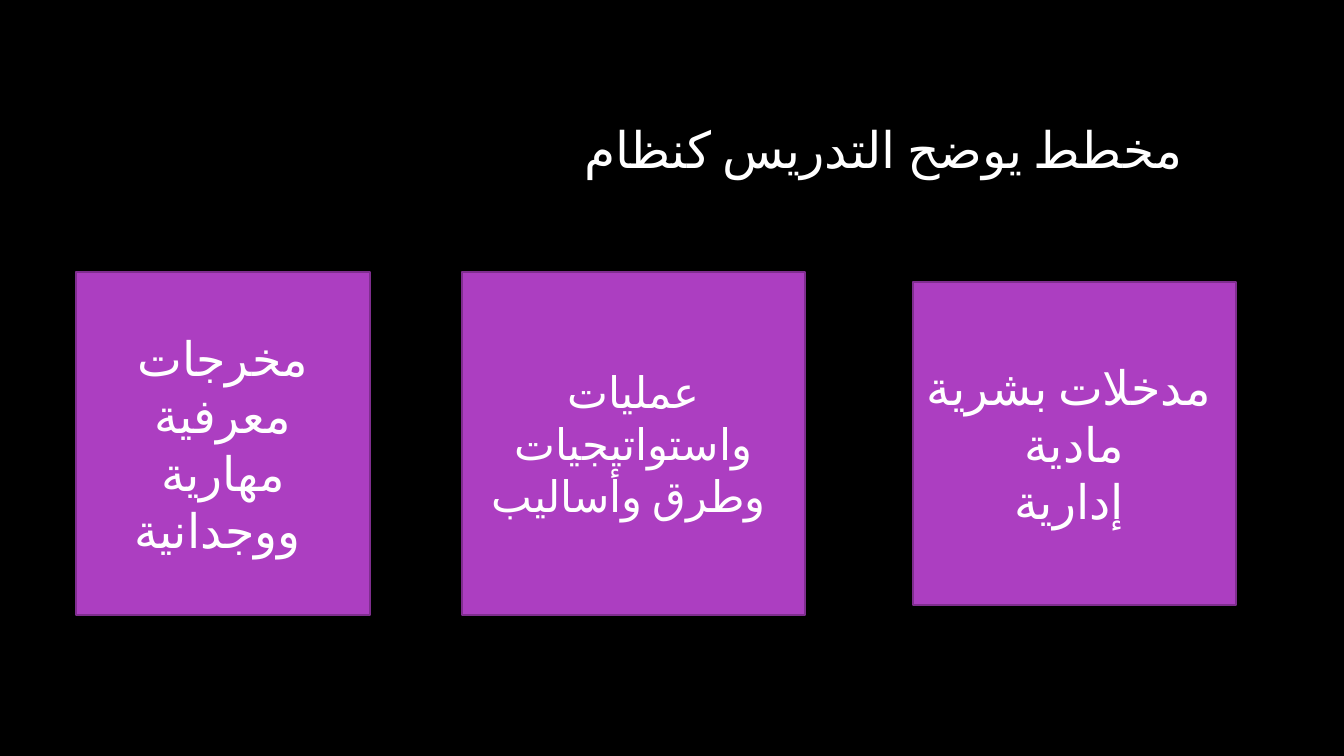
from lxml import etree
from pptx import Presentation, util as u
from pptx.dml.color import RGBColor
from pptx.enum import lang, shapes, text
from pptx.oxml import ns

SCALE = 914400 / 100.8
BLACK = RGBColor(0x00, 0x00, 0x00)
WHITE = RGBColor(0xFF, 0xFF, 0xFF)
PURPLE = RGBColor(0xAC, 0x3E, 0xC1)
DARK_PURPLE = RGBColor(0x7F, 0x2E, 0x8F)
FONT = "Calibri"


def px(*lengths):
    return [u.Emu(round(length * SCALE)) for length in lengths]


def write(shape, content, size, alignment):
    text_frame = shape.text_frame
    text_frame.word_wrap = True
    text_frame.vertical_anchor = text.MSO_ANCHOR.MIDDLE
    text_frame.text = content
    for paragraph in text_frame.paragraphs:
        paragraph.alignment = alignment
        for run in paragraph.runs:
            run.font.size = u.Pt(size)
            run.font.name = FONT
            run.font.language_id = lang.MSO_LANGUAGE_ID.ARABIC
            run.font.color.rgb = WHITE
            etree.SubElement(run.font._element, ns.qn("a:cs"), typeface=FONT)


presentation = Presentation()
presentation.slide_width, presentation.slide_height = px(1344, 756)
slide = presentation.slides.add_slide(presentation.slide_layouts[6])
slide.background.fill.solid()
slide.background.fill.fore_color.rgb = BLACK

title = slide.shapes.add_textbox(*px(76, 68, 1117, 160))
write(title, "مخطط يوضح التدريس كنظام ", 36, text.PP_ALIGN.RIGHT)
title.text_frame.paragraphs[0]._p.get_or_add_pPr().set("rtl", "1")

STAGES = [
    (913, 282, 323, 323, 34, "مدخلات بشرية \nمادية\nإدارية "),
    (462, 272, 343, 343, 31, "عمليات واستواتيجيات\nوطرق وأساليب "),
    (76, 272, 294, 343, 34, "مخرجات معرفية\nمهارية\nووجدانية "),
]
for left, top, width, height, size, content in STAGES:
    stage = slide.shapes.add_shape(
        shapes.MSO_SHAPE.RECTANGLE, *px(left, top, width, height))
    stage.shadow.inherit = False
    stage.fill.solid()
    stage.fill.fore_color.rgb = PURPLE
    stage.line.color.rgb = DARK_PURPLE
    stage.line.width = u.Pt(1.5)
    write(stage, content, size, text.PP_ALIGN.CENTER)

presentation.save("out.pptx")
